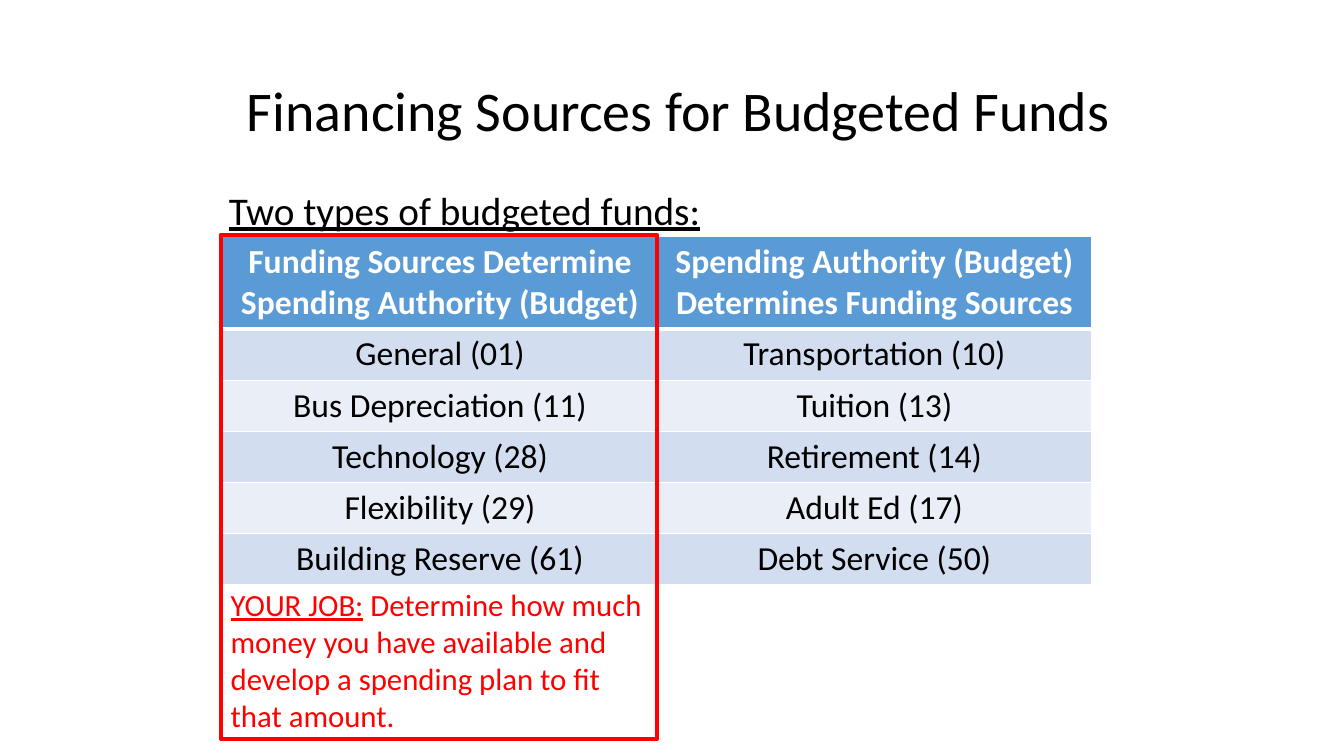
from dataclasses import dataclass

from lxml.etree import SubElement
from pptx import Presentation
from pptx.dml.color import RGBColor
from pptx.enum.shapes import MSO_SHAPE
from pptx.enum.text import MSO_ANCHOR as Anchor, MSO_AUTO_SIZE as AutoSize, PP_ALIGN as Align
from pptx.oxml.ns import qn
from pptx.util import Emu, Inches, Pt

COLORS = {
    "text": "000000",
    "header": "5B9BD5",
    "band_dark": "D2DEEF",
    "band_light": "EAEFF7",
    "white": "FFFFFF",
    "job": "FF0000",
}
FONT = "Calibri"
SLIDE_WIDTH, SLIDE_HEIGHT = Inches(13.33), Inches(7.5)
GRID_COLUMNS, GRID_ROWS = 160, 90
HEADER_ROWS, FUND_ROWS = 10.8, 6

FUNDS = [
    ("Funding Sources Determine Spending Authority (Budget)",
     "Spending Authority (Budget) Determines Funding Sources"),
    ("General (01)", "Transportation (10)"),
    ("Bus Depreciation (11)", "Tuition (13)"),
    ("Technology (28)", "Retirement (14)"),
    ("Flexibility (29)", "Adult Ed (17)"),
    ("Building Reserve (61)", "Debt Service (50)"),
]


@dataclass(frozen=True)
class Area:
    """A rectangle in columns and rows of the slide grid."""
    left: float
    top: float
    width: float
    height: float

    def box(self) -> dict[str, Emu]:
        return {"left": across(self.left), "top": down(self.top),
                "width": across(self.width), "height": down(self.height)}


@dataclass(frozen=True)
class Style:
    size: float
    color: str
    bold: bool = False
    underline: bool = False


TITLE_AREA = Area(28.2, 4.8, 105.84, 17.4)
LEAD_AREA = Area(26.04, 22.2, 108, 9)
FUNDS_AREA = Area(26.52, 28.2, 103.44, HEADER_ROWS + FUND_ROWS * (len(FUNDS) - 1))
JOB_AREA = Area(26.28, 27.96, 51.96, 60)


def across(columns: float) -> Emu:
    return Emu(round(SLIDE_WIDTH * columns / GRID_COLUMNS))


def down(rows: float) -> Emu:
    return Emu(round(SLIDE_HEIGHT * rows / GRID_ROWS))


def rgb(name: str) -> RGBColor:
    return RGBColor.from_string(COLORS[name])


def apply(target, values: dict) -> None:
    for attribute, value in values.items():
        setattr(target, attribute, value)


def write(paragraph, text: str, style: Style) -> None:
    run = paragraph.add_run()
    run.text = text
    apply(run.font, {"name": FONT, "size": Pt(style.size), "bold": style.bold,
                     "underline": style.underline})
    run.font.color.rgb = rgb(style.color)


def fill_placeholder(holder, area: Area, anchor: Anchor, text: str, style: Style,
                     spacing: dict):
    apply(holder, area.box())
    apply(holder.text_frame, {"auto_size": AutoSize.NONE, "word_wrap": True,
                              "vertical_anchor": anchor})
    paragraph = holder.text_frame.paragraphs[0]
    apply(paragraph, {"alignment": Align.LEFT, "line_spacing": 0.9, **spacing})
    write(paragraph, text, style)
    return paragraph


def remove_bullet(paragraph) -> None:
    properties = paragraph._p.get_or_add_pPr()
    properties.set("marL", "0")
    properties.set("indent", "0")
    SubElement(properties, qn("a:buNone"))


def add_borders(cell, top: float, bottom: float) -> None:
    """Draw white borders; the sides are 1 point wide."""
    properties = cell._tc.get_or_add_tcPr()
    widths = {"a:lnL": 1, "a:lnR": 1, "a:lnT": top, "a:lnB": bottom}
    for position, (side, width) in enumerate(widths.items()):
        line = SubElement(properties, qn(side), w=str(Pt(width)))
        SubElement(SubElement(line, qn("a:solidFill")), qn("a:srgbClr"), val=COLORS["white"])
        properties.insert(position, line)


def add_funds_table(slide) -> None:
    table = slide.shapes.add_table(len(FUNDS), len(FUNDS[0]), **FUNDS_AREA.box()).table
    for column in table.columns:
        column.width = across(FUNDS_AREA.width / len(FUNDS[0]))
    for index, funds in enumerate(FUNDS):
        is_header = index == 0
        table.rows[index].height = down(HEADER_ROWS if is_header else FUND_ROWS)
        band = "header" if is_header else "band_dark" if index % 2 else "band_light"
        style = Style(24, "white" if is_header else "text", bold=is_header)
        for cell, fund in zip(table.rows[index].cells, funds):
            cell.fill.solid()
            cell.fill.fore_color.rgb = rgb(band)
            add_borders(cell, top=3 if index == 1 else 1, bottom=3 if is_header else 1)
            paragraph = cell.text_frame.paragraphs[0]
            paragraph.alignment = Align.CENTER
            write(paragraph, fund, style)


def add_job_frame(slide) -> None:
    frame = slide.shapes.add_shape(MSO_SHAPE.RECTANGLE, **JOB_AREA.box())
    frame.shadow.inherit = False
    frame.fill.background()
    frame.line.color.rgb = rgb("job")
    frame.line.width = Pt(3)
    apply(frame.text_frame, {"word_wrap": True, "vertical_anchor": Anchor.BOTTOM})
    job = frame.text_frame.paragraphs[0]
    job.alignment = Align.LEFT
    write(job, "YOUR JOB:", Style(22, "job", underline=True))
    write(job, " Determine how much money you have available and develop "
               "a spending plan to fit that amount.", Style(22, "job"))


def main() -> None:
    deck = Presentation()
    apply(deck, {"slide_width": SLIDE_WIDTH, "slide_height": SLIDE_HEIGHT})
    slide = deck.slides.add_slide(deck.slide_layouts[1])
    fill_placeholder(slide.shapes.title, TITLE_AREA, Anchor.MIDDLE,
                     "Financing Sources for Budgeted Funds", Style(40, "text"), {})
    lead = fill_placeholder(slide.placeholders[1], LEAD_AREA, Anchor.TOP,
                            "Two types of budgeted funds:",
                            Style(28, "text", underline=True), {"space_before": Pt(10)})
    remove_bullet(lead)
    add_funds_table(slide)
    add_job_frame(slide)
    deck.save("out.pptx")


if __name__ == "__main__":
    main()
